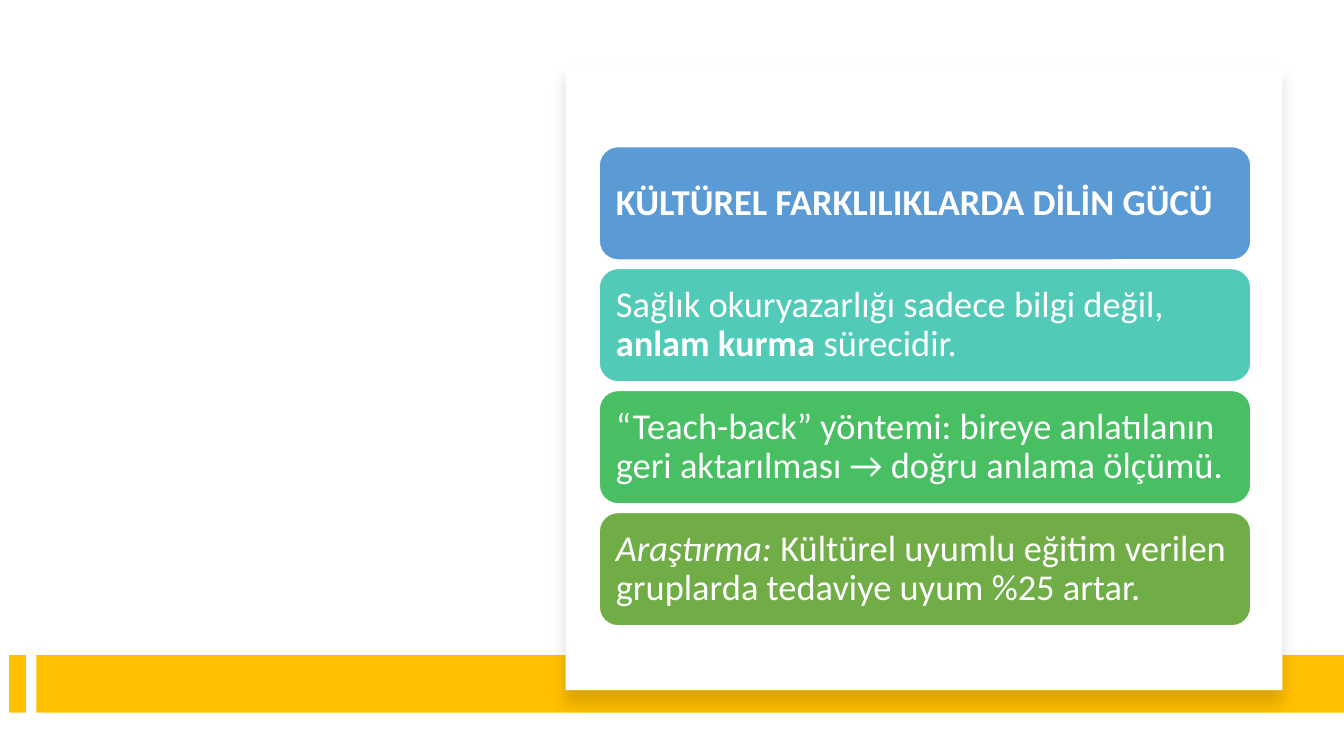
from lxml.etree import SubElement
from pptx import Presentation
from pptx.dml.color import RGBColor
from pptx.enum.shapes import MSO_SHAPE
from pptx.enum.text import MSO_ANCHOR, PP_ALIGN
from pptx.oxml.ns import qn
from pptx.util import Pt


def color(value):
    return RGBColor.from_string(value)


def add_run(p, text, font="Calibri", size=26, fill="FFFFFF", bold=False, italic=False):
    r = p.add_run()
    r.text = text
    r.font.name, r.font.size = font, Pt(size)
    r.font.bold, r.font.italic = bold, italic
    r.font.color.rgb = color(fill)


class SlideBuilder:
    WHITE, GOLD = "FFFFFF", "FFC000"
    INSET = 8

    def __init__(self, prs):
        self.s = prs.slides.add_slide(prs.slide_layouts[6])

    def box(self, x, y, w, h, fill, kind=MSO_SHAPE.RECTANGLE):
        sp = self.s.shapes.add_shape(kind, Pt(x), Pt(y), Pt(w), Pt(h))
        sp.shadow.inherit = False
        sp.fill.solid()
        sp.fill.fore_color.rgb = color(fill)
        sp.line.fill.background()
        return sp

    def card(self, x, y, w, h):
        sp = self.box(x, y, w, h, self.WHITE)
        effects = sp._element.spPr.find(qn("a:effectLst"))
        shadow = SubElement(effects, qn("a:outerShdw"), blurRad=str(Pt(11)),
                            dist=str(Pt(10)), dir="5400000", algn="t", rotWithShape="0")
        tint = SubElement(shadow, qn("a:srgbClr"), val="000000")
        SubElement(tint, qn("a:alpha"), val="15000")

    def message(self, x, y, w, h, fill, runs):
        sp = self.box(x, y, w, h, fill, MSO_SHAPE.ROUNDED_RECTANGLE)
        sp.line.color.rgb = color(self.WHITE)
        sp.line.width = Pt(1)
        tf = sp.text_frame
        tf.word_wrap = True
        tf.vertical_anchor = MSO_ANCHOR.MIDDLE
        tf.margin_left = tf.margin_right = Pt(self.INSET)
        tf.margin_top = tf.margin_bottom = Pt(self.INSET)
        p = tf.paragraphs[0]
        p.alignment = PP_ALIGN.LEFT
        p.line_spacing = 0.9
        for text, style in runs:
            add_run(p, text, **style)


MESSAGES = [
    ("5B9BD5", [("KÜLTÜREL FARKLILIKLARDA DİLİN GÜCÜ", {"bold": True})]),
    ("52CAB8", [("Sağlık okuryazarlığı sadece bilgi değil, ", {}),
                ("anlam kurma", {"bold": True}),
                (" sürecidir.", {})]),
    ("49BF64", [("“Teach-back” yöntemi: bireye anlatılanın geri aktarılması "
                 "→ doğru anlama ölçümü.", {})]),
    ("70AD47", [("Araştırma:", {"italic": True}),
                (" Kültürel uyumlu eğitim verilen gruplarda tedaviye uyum %25 artar.", {})]),
]


def main():
    prs = Presentation()
    prs.slide_width, prs.slide_height = Pt(960), Pt(540)
    slide = SlideBuilder(prs)

    # Gold band along the bottom
    for x, w in ((6.5, 12), (26, 934)):
        slide.box(x, 468, w, 41, slide.GOLD)

    # White card with its stack of messages
    slide.card(404, 46, 512, 447)
    for i, (fill, runs) in enumerate(MESSAGES):
        slide.message(428, 104.7 + i * 87.12, 465.5, 81, fill, runs)

    prs.save("out.pptx")


if __name__ == "__main__":
    main()
